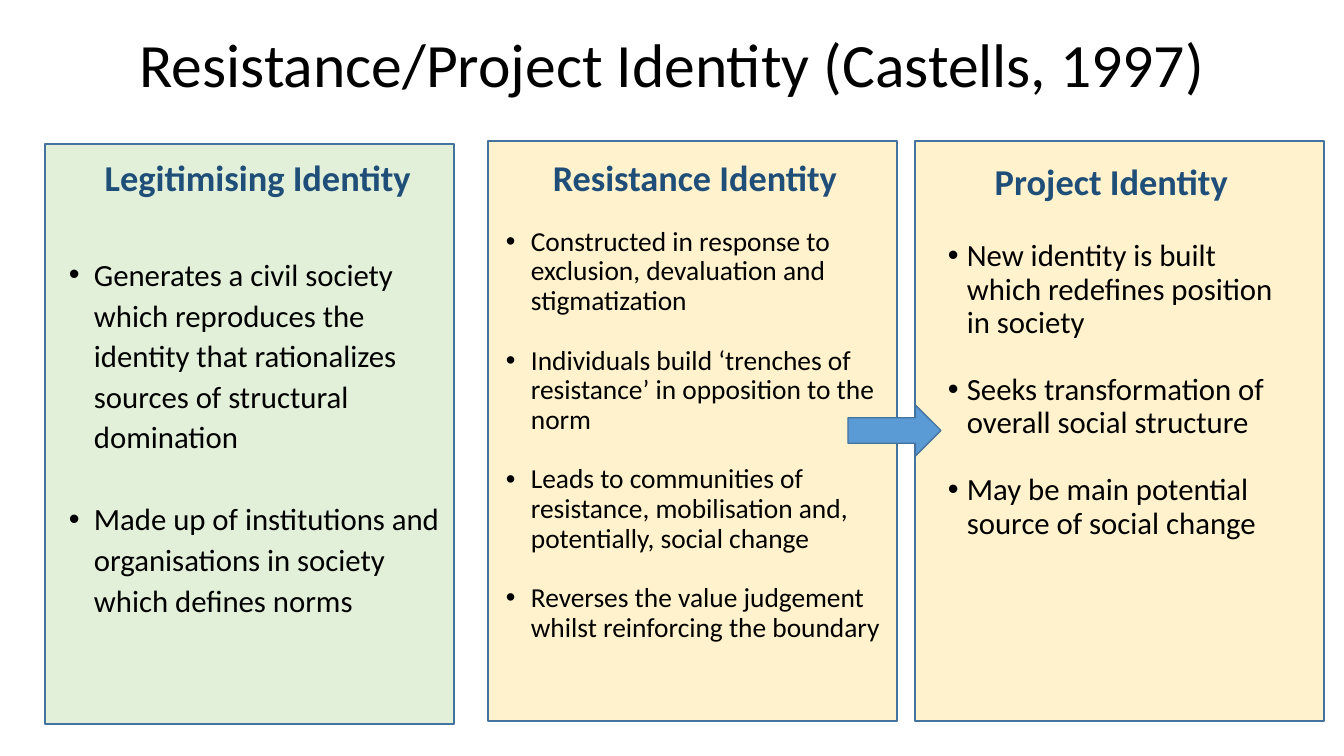
import pptx
import pptx.util
import pptx.dml.color
import pptx.enum.shapes
import pptx.enum.text
import pptx.oxml.ns
import lxml.etree

Pt = pptx.util.Pt
RGBColor = pptx.dml.color.RGBColor
MSO_SHAPE = pptx.enum.shapes.MSO_SHAPE
PP_ALIGN = pptx.enum.text.PP_ALIGN

BLACK = RGBColor(0x00, 0x00, 0x00)
NAVY = RGBColor(0x1F, 0x4E, 0x79)
GREEN = RGBColor(0xE2, 0xF0, 0xD9)
CREAM = RGBColor(0xFF, 0xF2, 0xCC)
BLUE = RGBColor(0x5B, 0x9B, 0xD5)
OUTLINE = RGBColor(0x43, 0x73, 0x9E)
FONT = "Calibri"


def px(n):
    return pptx.util.Emu(round(n * 914400 / 100.8))


def add_outlined(kind, box, fill):
    sp = s.shapes.add_shape(kind, *map(px, box))
    sp.shadow.inherit = False
    sp.fill.solid()
    sp.fill.fore_color.rgb = fill
    sp.line.color.rgb = OUTLINE
    sp.line.width = Pt(1)


prs = pptx.Presentation()
prs.slide_width = px(1344)
prs.slide_height = px(756)
s = prs.slides.add_slide(prs.slide_layouts[5])

title = s.shapes.title
title.left, title.top, title.width, title.height = map(px, (93, 0, 1159, 136))
tf = title.text_frame
tf.word_wrap = True
tf.auto_size = pptx.enum.text.MSO_AUTO_SIZE.NONE
tf.vertical_anchor = pptx.enum.text.MSO_ANCHOR.MIDDLE
p = tf.paragraphs[0]
p.alignment = PP_ALIGN.CENTER
p.line_spacing = 0.9
r = p.add_run()
r.text = "Resistance/Project Identity (Castells, 1997)"
r.font.name = FONT
r.font.size = Pt(44)
r.font.color.rgb = BLACK

columns = [
    dict(panel=(45, 144, 409, 580), fill=GREEN, box=(8, 155, 450, 615),
         heading="Legitimising Identity", heading_size=26, heading_spacing=0.9,
         heading_margin=50, margin=76, hanging=25, size=22, spacing=1.1,
         first_gap=37.6, gap=29.5,
         bullets=["Generates a civil society which reproduces the identity that "
                  "rationalizes sources of structural domination",
                  "Made up of institutions and organisations in society which "
                  "defines norms"]),
    dict(panel=(488, 141, 409, 580), fill=CREAM, box=(445, 162, 450, 553),
         heading="Resistance Identity", heading_size=25.9, heading_spacing=0.7,
         heading_margin=50, margin=76, hanging=25, size=19.6, spacing=0.9,
         first_gap=21.5, gap=21.5,
         bullets=["Constructed in response to exclusion, devaluation and "
                  "stigmatization",
                  "Individuals build ‘trenches of resistance’ in opposition to "
                  "the norm",
                  "Leads to communities of resistance, mobilisation and, "
                  "potentially, social change",
                  "Reverses the value judgement whilst reinforcing the boundary"]),
    dict(panel=(915, 141, 409, 580), fill=CREAM, box=(938, 159, 347, 615),
         heading="Project Identity", heading_size=26, heading_spacing=0.9,
         heading_margin=0, margin=19, hanging=19, size=22, spacing=0.9,
         first_gap=26.4, gap=24.2,
         bullets=["New identity is built which redefines position in society",
                  "Seeks transformation of overall social structure",
                  "May be main potential source of social change"]),
]

for col in columns:
    add_outlined(MSO_SHAPE.RECTANGLE, col["panel"], col["fill"])
    tf = s.shapes.add_textbox(*map(px, col["box"])).text_frame
    tf.word_wrap = True
    p = tf.paragraphs[0]
    p._p.get_or_add_pPr().set("marL", str(px(col["heading_margin"])))
    p.alignment = PP_ALIGN.CENTER
    p.line_spacing = col["heading_spacing"]
    r = p.add_run()
    r.text = col["heading"]
    r.font.name = FONT
    r.font.size = Pt(col["heading_size"])
    r.font.bold = True
    r.font.color.rgb = NAVY
    for i, bullet in enumerate(col["bullets"]):
        p = tf.add_paragraph()
        pPr = p._p.get_or_add_pPr()
        pPr.set("marL", str(px(col["margin"])))
        pPr.set("indent", str(-px(col["hanging"])))
        qn = pptx.oxml.ns.qn
        lxml.etree.SubElement(pPr, qn("a:buFont")).set("typeface", "Arial")
        lxml.etree.SubElement(pPr, qn("a:buChar")).set("char", "•")
        p.line_spacing = col["spacing"]
        p.space_before = Pt(col["gap"] if i else col["first_gap"])
        r = p.add_run()
        r.text = bullet
        r.font.name = FONT
        r.font.size = Pt(col["size"])
        r.font.color.rgb = BLACK

add_outlined(MSO_SHAPE.RIGHT_ARROW, (848, 405, 93, 51), BLUE)

prs.save("out.pptx")
